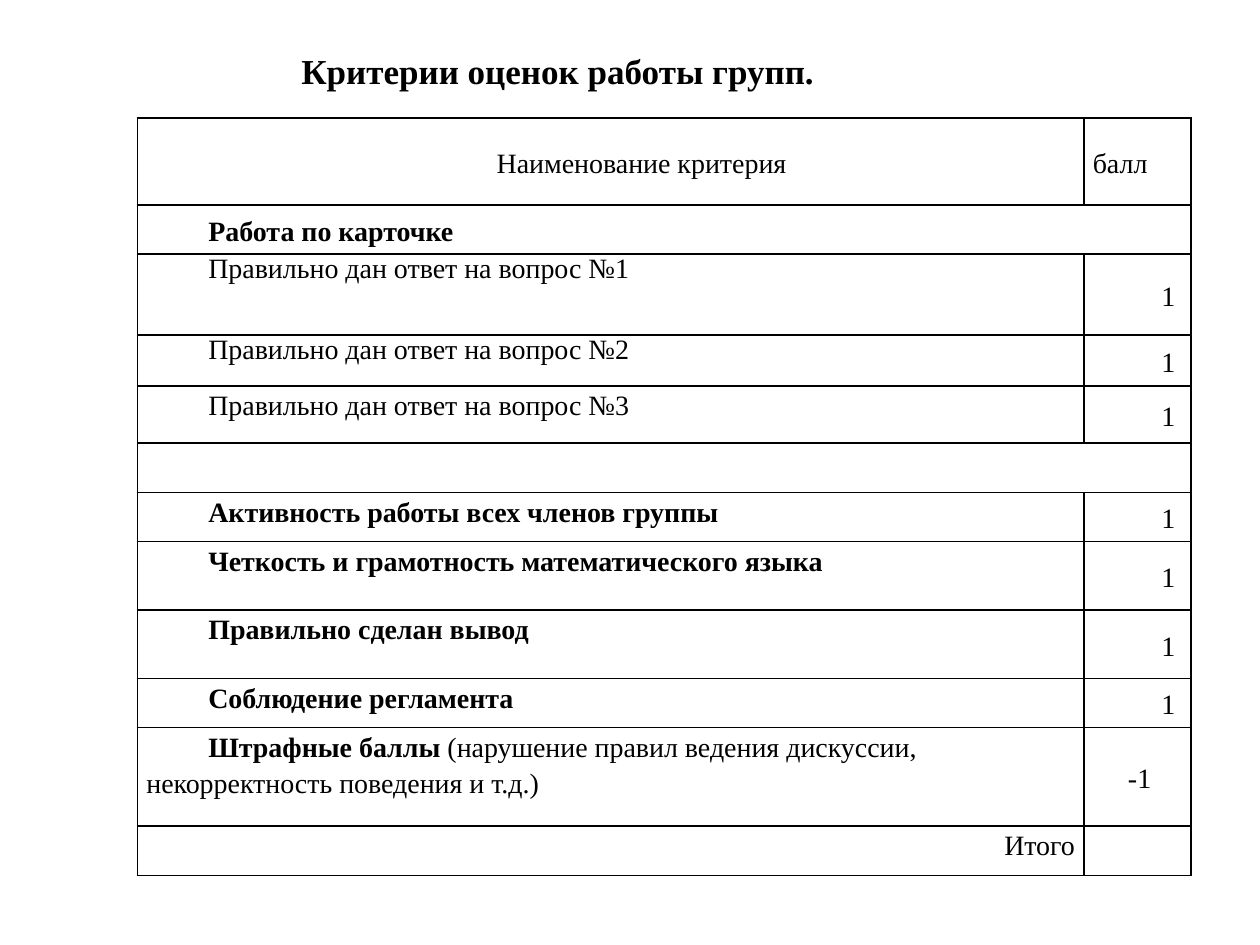
from dataclasses import dataclass

from lxml import etree
from pptx import Presentation
from pptx import util as u
from pptx.dml import color
from pptx.enum import text
from pptx.oxml import ns

FONT = "Times New Roman"
BLACK = "000000"
INDENT = 1.25
LEFT, CENTER = text.PP_ALIGN.LEFT, text.PP_ALIGN.CENTER
RIGHT, JUSTIFY = text.PP_ALIGN.RIGHT, text.PP_ALIGN.JUSTIFY
TOP, MIDDLE = text.MSO_ANCHOR.TOP, text.MSO_ANCHOR.MIDDLE


@dataclass
class Entry:
    bold: str = ""
    plain: str = ""
    align: text.PP_ALIGN = LEFT
    anchor: text.MSO_ANCHOR = TOP
    indent: float = INDENT
    spacing: float = 1.15


@dataclass
class Criterion:
    height: float
    name: Entry
    score: Entry | None = None


def rgb(value: str) -> color.RGBColor:
    return color.RGBColor.from_string(value)


def apply(target, **values) -> None:
    for key, value in values.items():
        setattr(target, key, value)


def point() -> Entry:
    return Entry(plain="1", align=CENTER, anchor=MIDDLE)


def answer(number: int, **layout) -> Entry:
    return Entry(plain=f"Правильно дан ответ на вопрос №{number}", **layout)


def write(paragraph, entry: Entry, size: int) -> None:
    apply(paragraph, alignment=entry.align, line_spacing=entry.spacing)
    properties = paragraph._p.get_or_add_pPr()
    properties.set("marL", "0")
    properties.set("indent", str(u.Cm(entry.indent)))
    apply(paragraph.font, size=u.Pt(size), name=FONT)
    for words, bold in ((entry.bold, True), (entry.plain, False)):
        if words:
            run = paragraph.add_run()
            run.text = words
            apply(run.font, size=u.Pt(size), name=FONT, bold=bold)
            run.font.color.rgb = rgb(BLACK)


def add_borders(cell) -> None:
    properties = cell._tc.get_or_add_tcPr()
    for index, side in enumerate(("lnL", "lnR", "lnT", "lnB")):
        line = etree.Element(ns.qn(f"a:{side}"), w=str(u.Pt(1)))
        fill = etree.SubElement(line, ns.qn("a:solidFill"))
        etree.SubElement(fill, ns.qn("a:srgbClr"), val=BLACK)
        properties.insert(index, line)


def fill_cell(cell, entry: Entry) -> None:
    apply(cell, margin_left=u.Cm(0.18), margin_right=u.Cm(0.18),
          margin_top=0, margin_bottom=0, vertical_anchor=entry.anchor)
    cell.fill.background()
    add_borders(cell)
    write(cell.text_frame.paragraphs[0], entry, 16)


def add_title(slide, words: str) -> None:
    title = slide.shapes.title
    apply(title, left=u.Cm(4.57), top=u.Cm(0.79), width=u.Cm(12.5), height=u.Cm(1.27))
    apply(title.text_frame, word_wrap=True, vertical_anchor=MIDDLE,
          auto_size=text.MSO_AUTO_SIZE.NONE)
    write(title.text_frame.paragraphs[0], Entry(bold=words, spacing=1.0), 20)


def add_criteria(slide, criteria: list[Criterion], widths: tuple[float, ...]) -> None:
    height = sum(criterion.height for criterion in criteria)
    table = slide.shapes.add_table(len(criteria), len(widths), u.Cm(2.77), u.Cm(2.38),
                                   u.Cm(sum(widths)), u.Cm(height)).table
    apply(table, first_row=False, horz_banding=False)
    for column, width in zip(table.columns, widths):
        column.width = u.Cm(width)
    for index, criterion in enumerate(criteria):
        table.rows[index].height = u.Cm(criterion.height)
        name, score = table.cell(index, 0), table.cell(index, 1)
        fill_cell(name, criterion.name)
        fill_cell(score, criterion.score or Entry())
        if criterion.score is None:
            name.merge(score)


CRITERIA = [
    Criterion(1.75, Entry(plain="Наименование критерия", align=CENTER, anchor=MIDDLE),
              Entry(plain="балл", anchor=MIDDLE, indent=0)),
    Criterion(0.99, Entry(bold="Работа по карточке", anchor=MIDDLE)),
    Criterion(1.63, answer(1, align=JUSTIFY, spacing=1.0), point()),
    Criterion(1.03, answer(2, align=JUSTIFY, spacing=1.0), point()),
    Criterion(1.15, answer(3), point()),
    Criterion(1, Entry()),
    Criterion(0.99, Entry(bold="Активность работы всех членов группы"), point()),
    Criterion(1.38, Entry(bold="Четкость и грамотность математического языка"), point()),
    Criterion(1.38, Entry(bold="Правильно сделан вывод"), point()),
    Criterion(0.99, Entry(bold="Соблюдение регламента"), point()),
    Criterion(1.98, Entry(bold="Штрафные баллы",
                          plain=" (нарушение правил ведения дискуссии, "
                                "некорректность поведения и т.д.)"),
              Entry(plain="-1", anchor=MIDDLE, indent=0.71)),
    Criterion(1, Entry(plain="Итого", align=RIGHT), Entry()),
]


def main() -> None:
    deck = Presentation()
    apply(deck, slide_width=u.Cm(25.4), slide_height=u.Cm(19.05))
    slide = deck.slides.add_slide(deck.slide_layouts[5])
    add_criteria(slide, CRITERIA, (19.08, 2.16))
    add_title(slide, "Критерии оценок работы групп.")
    deck.save("out.pptx")


if __name__ == "__main__":
    main()
